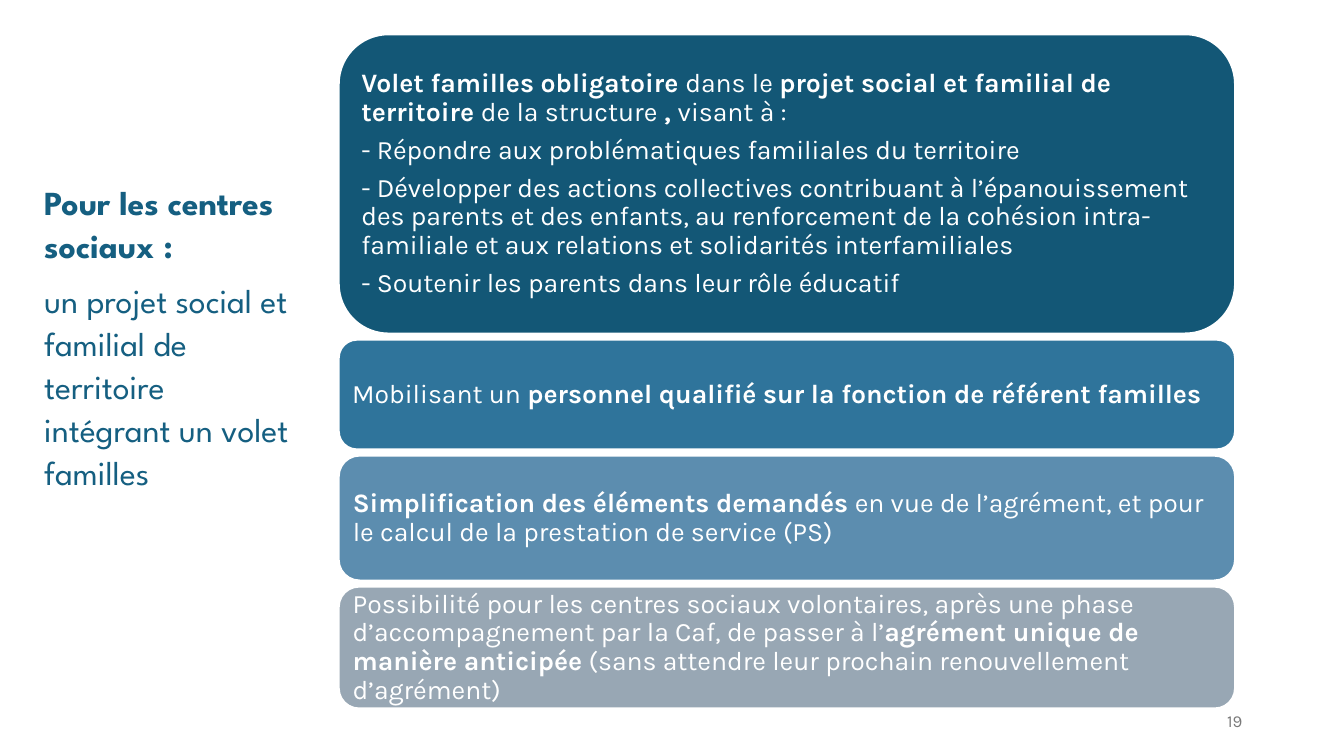
from pptx import Presentation
from pptx.dml.color import RGBColor
from pptx.enum.shapes import MSO_SHAPE
from pptx.enum.text import MSO_ANCHOR, PP_ALIGN
from pptx.util import Inches, Pt

ROUND = MSO_SHAPE.ROUNDED_RECTANGLE
MIDDLE = MSO_ANCHOR.MIDDLE
LEFT, RIGHT = PP_ALIGN.LEFT, PP_ALIGN.RIGHT

WHITE = RGBColor(0xFF, 0xFF, 0xFF)
TEAL = RGBColor(0x15, 0x5F, 0x81)
GREY = RGBColor(0x79, 0x79, 0x79)
NAVY = RGBColor(0x13, 0x57, 0x76)
BLUE = RGBColor(0x2F, 0x74, 0x9B)
SKY = RGBColor(0x5C, 0x8D, 0xAF)
SLATE = RGBColor(0x98, 0xA7, 0xB4)

deck = Presentation()
deck.slide_width, deck.slide_height = Inches(13.33), Inches(7.5)
slide = deck.slides.add_slide(deck.slide_layouts[6])


def place(x, y, w, h):
    """Turn percentages of the slide into a left, top, width, height tuple."""
    wide, high = deck.slide_width / 100, deck.slide_height / 100
    return int(x * wide), int(y * high), int(w * wide), int(h * high)


def write(frame, paras, font, size, color, line=1.0, after=0, align=LEFT):
    """Fill a frame with paragraphs, each a list of (text, bold) runs."""
    frame.word_wrap = True
    for i, runs in enumerate(paras):
        para = frame.paragraphs[0] if i == 0 else frame.add_paragraph()
        para.alignment = align
        para.line_spacing = line
        para.space_before, para.space_after = Pt(0), Pt(after)
        for text, bold in runs:
            run = para.add_run()
            run.text = text
            run.font.name, run.font.size = font, Pt(size)
            run.font.bold = bold
            run.font.color.rgb = color


# Side title
side = slide.shapes.add_textbox(*place(2.55, 23.07, 19.95, 48.53))
write(side.text_frame, [
    [("Pour les centres sociaux :", True)],
    [("un projet social et familial de territoire intégrant un volet familles", False)],
], "League Spartan", 24, TEAL, line=1.07, after=8)

# Stacked cards: fill, height in percent, paragraphs
cards = [
    (NAVY, 39.6, [
        [("Volet familles obligatoire ", True), ("dans le ", False),
         ("projet social et familial de territoire ", True),
         ("de la structure", False), (" , ", True), ("visant à :", False)],
        [("- Répondre aux problématiques familiales du territoire", False)],
        [("- Développer des actions collectives contribuant à l’épanouissement "
          "des parents et des enfants, au renforcement de la cohésion "
          "intra-familiale et aux relations et solidarités interfamiliales", False)],
        [("- Soutenir les parents dans leur rôle éducatif", False)],
    ]),
    (BLUE, 14.53, [
        [("Mobilisant un ", False),
         ("personnel qualifié sur la fonction de référent familles", True)],
    ]),
    (SKY, 16.53, [
        [("Simplification des éléments demandés", True),
         (" en vue de l’agrément, et pour le calcul de la prestation "
          "de service (PS)", False)],
    ]),
    (SLATE, 16.13, [
        [("Possibilité pour les centres sociaux volontaires, après une phase "
          "d’accompagnement par la Caf, de passer à l’", False),
         ("agrément unique de manière anticipée", True),
         (" (sans attendre leur prochain renouvellement d’agrément)", False)],
    ]),
]
GAP = 0.8
top = 4.53
for fill, high, paras in cards:
    card = slide.shapes.add_shape(ROUND, *place(25.2, top, 66.7, high))
    card.shadow.inherit = False
    card.fill.solid()
    card.fill.fore_color.rgb = fill
    card.line.color.rgb = WHITE
    card.line.width = Pt(1.5)
    frame = card.text_frame
    frame.vertical_anchor = MIDDLE
    frame.margin_left = frame.margin_right = Inches(0.08)
    frame.margin_top = frame.margin_bottom = Inches(0.08)
    write(frame, paras, "Karla", 19, WHITE, line=0.9, after=6.65)
    top += high + GAP

# Page number
page = slide.shapes.add_textbox(*place(70.67, 92.67, 22.5, 5.33))
page.text_frame.vertical_anchor = MIDDLE
write(page.text_frame, [[("19", False)]], "Karla", 12, GREY, align=RIGHT)

deck.save("out.pptx")
